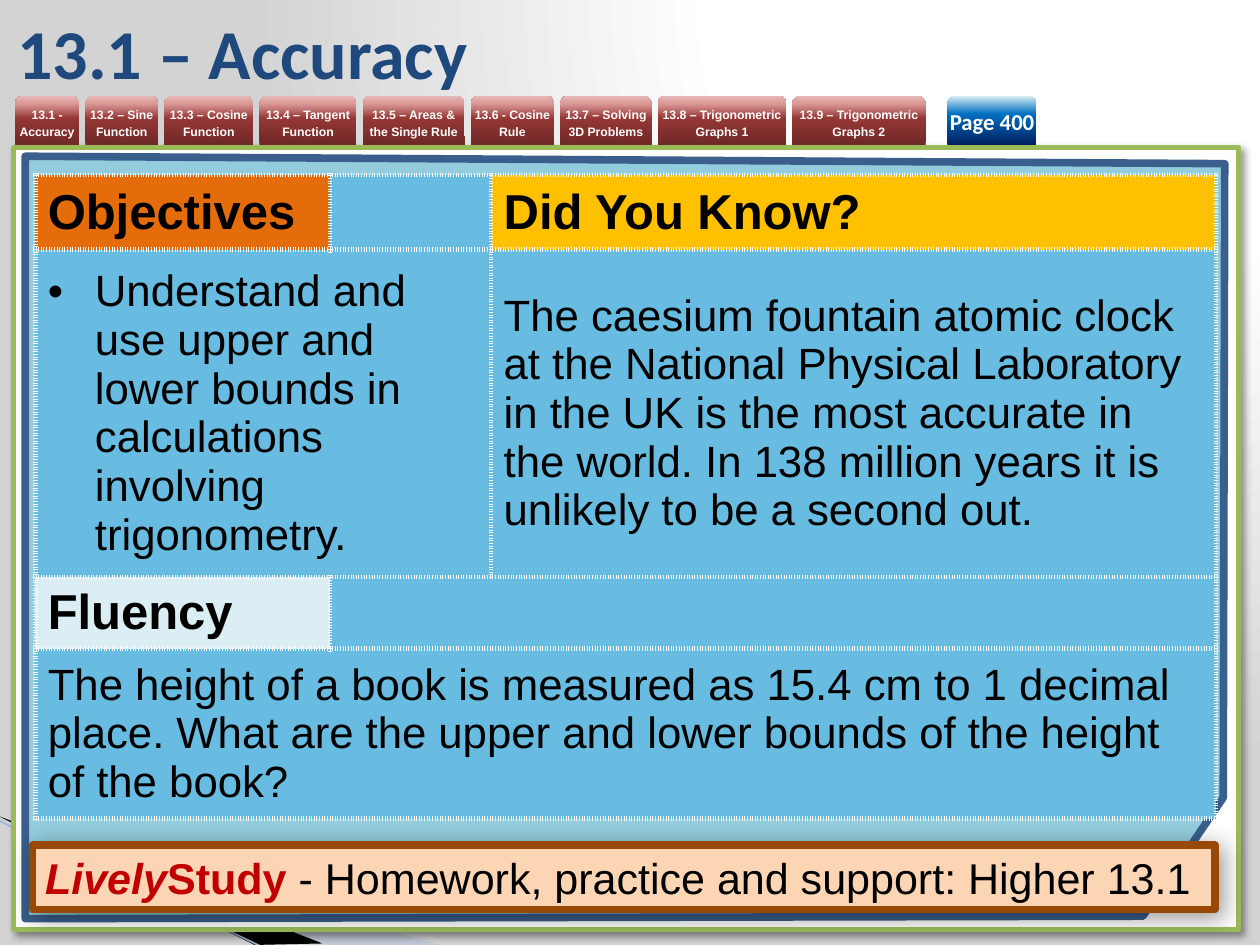
from lxml import etree
from pptx import Presentation
from pptx.dml.color import RGBColor
from pptx.enum.shapes import MSO_CONNECTOR, MSO_SHAPE
from pptx.enum.text import MSO_ANCHOR as ANCHOR, PP_ALIGN as ALIGN
from pptx.oxml import parse_xml
from pptx.oxml.ns import nsdecls, qn
from pptx.util import Cm, Pt

WHITE = RGBColor(0xFF, 0xFF, 0xFF)
BLACK = RGBColor(0, 0, 0)
GREY = RGBColor(0xD3, 0xD3, 0xD3)
NAVY = RGBColor(0x1F, 0x49, 0x7D)
PALE_BLUE = RGBColor(0xA7, 0xB9, 0xDB)
LINE_BLUE = RGBColor(0x9E, 0xB3, 0xD6)
GREEN = RGBColor(0x9B, 0xBB, 0x59)
AQUA = RGBColor(0x93, 0xCD, 0xDD)
FRAME_BLUE = RGBColor(0x3A, 0x5F, 0x8C)
SKY = RGBColor(0x68, 0xBC, 0xE1)
ORANGE = RGBColor(0xE4, 0x6C, 0x0A)
GOLD = RGBColor(0xFF, 0xC0, 0x00)
ICE = RGBColor(0xDB, 0xEE, 0xF4)
PEACH = RGBColor(0xFC, 0xD5, 0xB5)
BROWN = RGBColor(0x98, 0x48, 0x07)
RED = RGBColor(0xC0, 0, 0)
RED_STOPS = [(0, RGBColor(0x6F, 0x29, 0x27)), (54, RGBColor(0x95, 0x37, 0x35)),
             (83, RGBColor(0xD9, 0x96, 0x94)), (100, RGBColor(0xE6, 0xB9, 0xB8))]
BLUE_STOPS = [(0, RGBColor(0, 0x20, 0x60)), (63, RGBColor(0, 0x70, 0xC0)), (100, ICE)]


def add_run(p, text, size, color, bold=False, italic=False, font="Arial"):
    r = p.add_run()
    r.text = text
    f = r.font
    f.name, f.size, f.bold, f.italic = font, Pt(size), bold, italic
    f.color.rgb = color


def set_stops(fill, element, stops):
    fill.gradient()
    gs_list = element.find(".//" + qn("a:gsLst"))
    for gs in list(gs_list):
        gs_list.remove(gs)
    for pos, color in stops:
        gs = etree.SubElement(gs_list, qn("a:gs"), pos=str(pos * 1000))
        etree.SubElement(gs, qn("a:srgbClr"), val=str(color))


prs = Presentation()
prs.slide_width, prs.slide_height = Cm(25.4), Cm(19.05)
s = prs.slides.add_slide(prs.slide_layouts[6])
shapes = s.shapes

# Background: radial gradient from the top right
bg = s.background.fill
set_stops(bg, s.element, [(0, WHITE), (40, WHITE), (100, GREY)])
lin = s.element.find(".//" + qn("a:lin"))
lin.getparent().replace(lin, parse_xml(
    f'<a:path {nsdecls("a")} path="circle">'
    '<a:fillToRect l="65000" t="0" r="0" b="98000"/></a:path>'))

# Corner wedges, points in hundredths of a cm
for points, color, alpha in (
        ([(-3, 1651), (886, 1905), (658, 1905), (-3, 1648)], PALE_BLUE, 40),
        ([(0, 1646), (650, 1902), (513, 1905), (3, 1648)], BLACK, 100)):
    fb = shapes.build_freeform(*points[0], scale=Cm(0.01))
    fb.add_line_segments(points[1:])
    sp = fb.convert_to_shape()
    sp.shadow.inherit = False
    sp.fill.solid()
    sp.fill.fore_color.rgb = color
    sp.line.fill.background()
    clr = sp.element.spPr.find(".//" + qn("a:srgbClr"))
    etree.SubElement(clr, qn("a:alpha"), val=str(alpha * 1000))

ln = shapes.add_connector(MSO_CONNECTOR.STRAIGHT, Cm(-0.03), Cm(16.54), Cm(5.31), Cm(19.1))
ln.line.color.rgb = LINE_BLUE
ln.line.width = Pt(0.95)
etree.SubElement(ln.element.spPr, qn("a:effectLst"))

# White panel, cut-corner frame
panel = shapes.add_shape(MSO_SHAPE.RECTANGLE, Cm(0.28), Cm(2.97), Cm(24.69), Cm(15.77))
fb = shapes.build_freeform(51, 315, scale=Cm(0.01))
fb.add_line_segments([(2469, 330), (2466, 1608), (2304, 1847), (51, 1852)])
frame = fb.convert_to_shape()

# Chapter tabs and page tab
TAB_TOP, TAB_HEIGHT, TAB_GAP = 1.93, 0.99, 0.12
tabs = [("13.1 - Accuracy", 1.3), ("13.2 – Sine Function", 1.47),
        ("13.3 – Cosine Function", 1.8), ("13.4 – Tangent Function", 1.96),
        ("13.5 – Areas & the Single Rule", 2.06), ("13.6 - Cosine Rule", 1.68),
        ("13.7 – Solving 3D Problems", 1.85), ("13.8 – Trigonometric Graphs 1", 2.59),
        ("13.9 – Trigonometric Graphs 2", 2.69), ("Page 400", 1.8)]
x = 0.3
for text, width in tabs:
    is_page = text.startswith("Page")
    if is_page:
        x = 19.1
    sp = shapes.add_shape(MSO_SHAPE.ROUND_2_SAME_RECTANGLE,
                          Cm(x), Cm(TAB_TOP), Cm(width), Cm(TAB_HEIGHT))
    sp.shadow.inherit = False
    set_stops(sp.fill, sp.element, BLUE_STOPS if is_page else RED_STOPS)
    sp.fill.gradient_angle = 90
    sp.line.fill.background()
    tf = sp.text_frame
    tf.word_wrap = True
    tf.margin_left = tf.margin_right = tf.margin_top = tf.margin_bottom = 0
    tf.vertical_anchor = ANCHOR.MIDDLE
    p = tf.paragraphs[0]
    p.alignment = ALIGN.CENTER
    if is_page:
        add_run(p, text, 13, WHITE, bold=True, font="Calibri")
    else:
        p.line_spacing = Pt(10)
        add_run(p, text, 7, WHITE, bold=True)
    x += width + TAB_GAP

# Title
tf = shapes.add_textbox(Cm(0.1), Cm(0.13), Cm(21), Cm(1.8)).text_frame
tf.word_wrap = True
tf.vertical_anchor = ANCHOR.MIDDLE
add_run(tf.paragraphs[0], "13.1 – Accuracy", 40, NAVY, bold=True, font="Calibri")

# Lesson table
cols, rows = [5.94, 3.25, 14.61], [1.5, 6.3, 1.35, 3.22]
tbl = shapes.add_table(len(rows), len(cols), Cm(0.71), Cm(3.53),
                       Cm(sum(cols)), Cm(sum(rows))).table
tbl.first_row = tbl.horz_banding = False
for col, width in zip(tbl.columns, cols):
    col.width = Cm(width)
for row, height in zip(tbl.rows, rows):
    row.height = Cm(height)
for cell in tbl.iter_cells():
    tc_pr = cell._tc.get_or_add_tcPr()
    for side in ("lnL", "lnR", "lnT", "lnB"):
        tc_pr.append(parse_xml(
            f'<a:{side} {nsdecls("a")} w="{Pt(3)}"><a:solidFill><a:srgbClr val="{WHITE}"/>'
            f'</a:solidFill><a:prstDash val="sysDot"/></a:{side}>'))
    cell.fill.solid()
    cell.fill.fore_color.rgb = SKY
    cell.vertical_anchor = ANCHOR.MIDDLE
for first, last in (((1, 0), (1, 1)), ((2, 1), (2, 2)), ((3, 0), (3, 2))):
    tbl.cell(*first).merge(tbl.cell(*last))

for r, c, text, color in ((0, 0, "Objectives", ORANGE), (0, 2, "Did You Know?", GOLD),
                          (2, 0, "Fluency", ICE)):
    cell = tbl.cell(r, c)
    cell.fill.fore_color.rgb = color
    add_run(cell.text_frame.paragraphs[0], text, 28, BLACK, bold=True)

for r, c, text in (
        (1, 0, "Understand and use upper and lower bounds in calculations "
               "involving trigonometry."),
        (1, 2, "The caesium fountain atomic clock at the National Physical Laboratory in the UK "
               "is the most accurate in the world. In 138 million years it is unlikely to be "
               "a second out."),
        (3, 0, "The height of a book is measured as 15.4 cm to 1 decimal place. What are the "
               "upper and lower bounds of the height of the book?")):
    add_run(tbl.cell(r, c).text_frame.paragraphs[0], text, 25, BLACK)

# Bullet on the objective
p_pr = tbl.cell(1, 0).text_frame.paragraphs[0]._p.get_or_add_pPr()
p_pr.set("marL", str(Cm(0.95)))
p_pr.set("indent", str(Cm(-0.95)))
etree.SubElement(p_pr, qn("a:buFont"), typeface="Arial")
etree.SubElement(p_pr, qn("a:buChar"), char="•")

# Homework bar
bar = shapes.add_shape(MSO_SHAPE.RECTANGLE, Cm(0.66), Cm(17.04), Cm(23.83), Cm(1.3))
tf = bar.text_frame
tf.word_wrap = True
tf.vertical_anchor = ANCHOR.MIDDLE
p = tf.paragraphs[0]
p.alignment = ALIGN.LEFT
add_run(p, "Lively", 24.6, RED, bold=True, italic=True)
add_run(p, "Study ", 24.6, RED, bold=True)
add_run(p, "- Homework, practice and support: Higher 13.1", 24.6, BLACK)

# Fill, outline and shadow of the large boxes
for sp, color, edge, width, blur in ((panel, WHITE, GREEN, 3, 4),
                                     (frame, AQUA, FRAME_BLUE, 4.33, None),
                                     (bar, PEACH, BROWN, 4.33, 13)):
    sp.fill.solid()
    sp.fill.fore_color.rgb = color
    sp.line.color.rgb = edge
    sp.line.width = Pt(width)
    sp.shadow.inherit = False
    if blur:
        sp.element.spPr.find(qn("a:effectLst")).append(parse_xml(
            f'<a:outerShdw {nsdecls("a")} blurRad="{Pt(blur)}" dist="{Pt(3)}" dir="2700000">'
            f'<a:srgbClr val="{BLACK}"><a:alpha val="40000"/></a:srgbClr></a:outerShdw>'))

prs.save("out.pptx")
